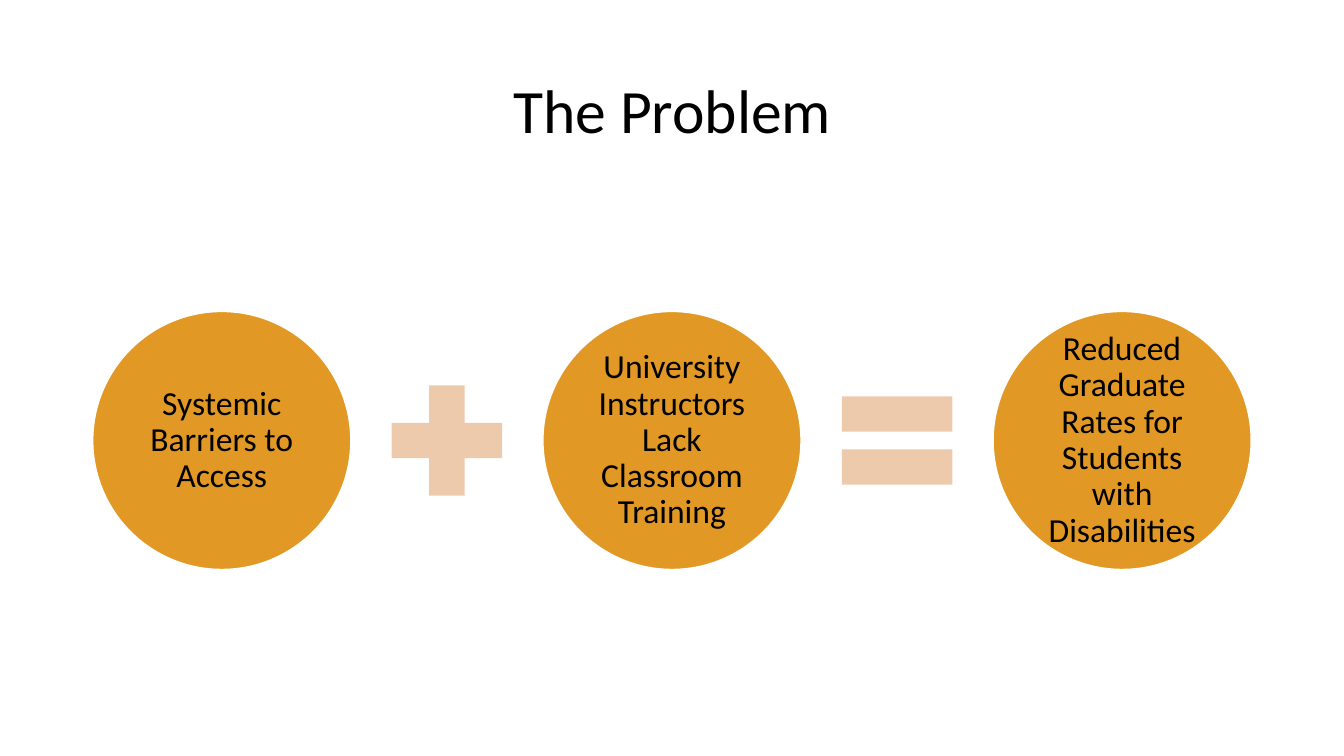
from pptx import Presentation
from pptx.dml.color import RGBColor
from pptx.enum.shapes import MSO_SHAPE
from pptx.enum.text import MSO_ANCHOR, PP_ALIGN
from pptx.util import Inches, Pt

CIRCLE = MSO_SHAPE.OVAL
PLUS = MSO_SHAPE.MATH_PLUS
EQUALS = MSO_SHAPE.MATH_EQUAL
MIDDLE = MSO_ANCHOR.MIDDLE
CENTER = PP_ALIGN.CENTER

FONT = "Calibri"
BLACK = "000000"
WHITE = "FFFFFF"
ORANGE = "E19825"
PEACH = "EECAAD"

FACTORS = [
    "Systemic Barriers to Access",
    "University Instructors Lack Classroom Training",
    "Reduced Graduate Rates for Students with Disabilities",
]
OPERATORS = [PLUS, EQUALS]


def color(hex_code):
    return RGBColor.from_string(hex_code)


def write(frame, text, size, margin):
    frame.text = text
    frame.word_wrap = True
    frame.vertical_anchor = MIDDLE
    frame.margin_left = frame.margin_right = Inches(margin)
    frame.margin_top = frame.margin_bottom = Inches(margin)
    paragraph = frame.paragraphs[0]
    paragraph.alignment = CENTER
    paragraph.line_spacing = 0.9
    font = paragraph.runs[0].font
    font.name = FONT
    font.size = Pt(size)
    font.color.rgb = color(BLACK)


def add_title(slide, left, top, width, height):
    title = slide.shapes.add_textbox(
        Inches(left), Inches(top), Inches(width), Inches(height))
    write(title.text_frame, "The Problem", 44, 0.05)


def add_symbol(slide, preset, center_x, center_y, size, fill):
    symbol = slide.shapes.add_shape(
        preset, Inches(center_x - size / 2), Inches(center_y - size / 2),
        Inches(size), Inches(size))
    symbol.shadow.inherit = False
    symbol.fill.solid()
    symbol.fill.fore_color.rgb = color(fill)
    symbol.line.fill.background()
    return symbol


def add_equation(slide, left, top, width, height):
    operator_size = 1.49
    pitch = (width - height) / (len(FACTORS) - 1)
    first_x = left + height / 2
    center_y = top + height / 2
    for index, factor in enumerate(FACTORS):
        center_x = first_x + index * pitch
        circle = add_symbol(slide, CIRCLE, center_x, center_y, height, ORANGE)
        circle.line.color.rgb = color(WHITE)
        circle.line.width = Pt(1)
        write(circle.text_frame, factor, 24, 0.03)
        if index < len(OPERATORS):
            add_symbol(slide, OPERATORS[index], center_x + pitch / 2,
                       center_y, operator_size, PEACH)


def main():
    deck = Presentation()
    deck.slide_width = Inches(13.33)
    deck.slide_height = Inches(7.5)
    slide = deck.slides.add_slide(deck.slide_layouts[6])
    add_title(slide, 0.92, 0.4, 11.5, 1.45)
    add_equation(slide, 0.92, 3.09, 11.49, 2.56)
    deck.save("out.pptx")


if __name__ == "__main__":
    main()
